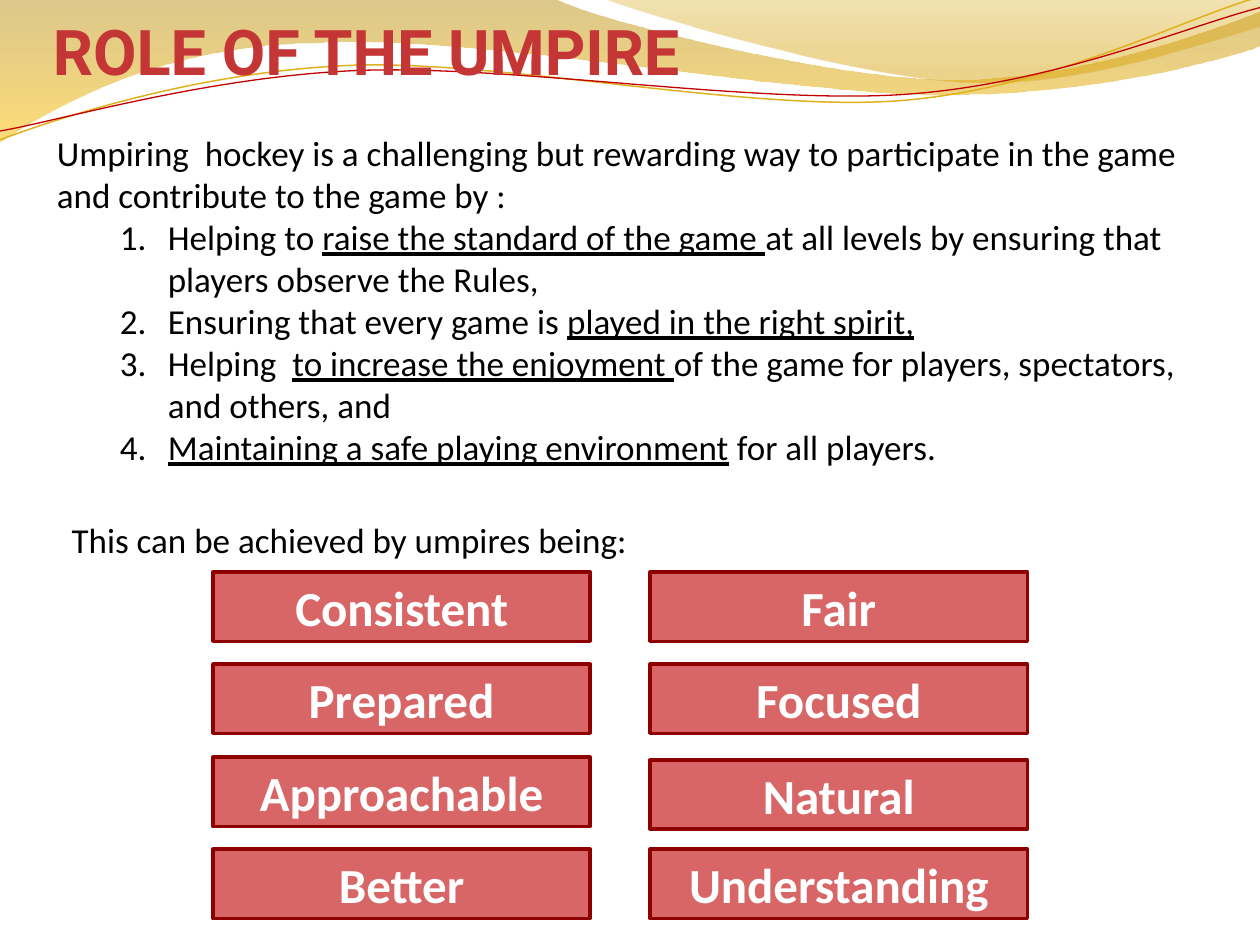
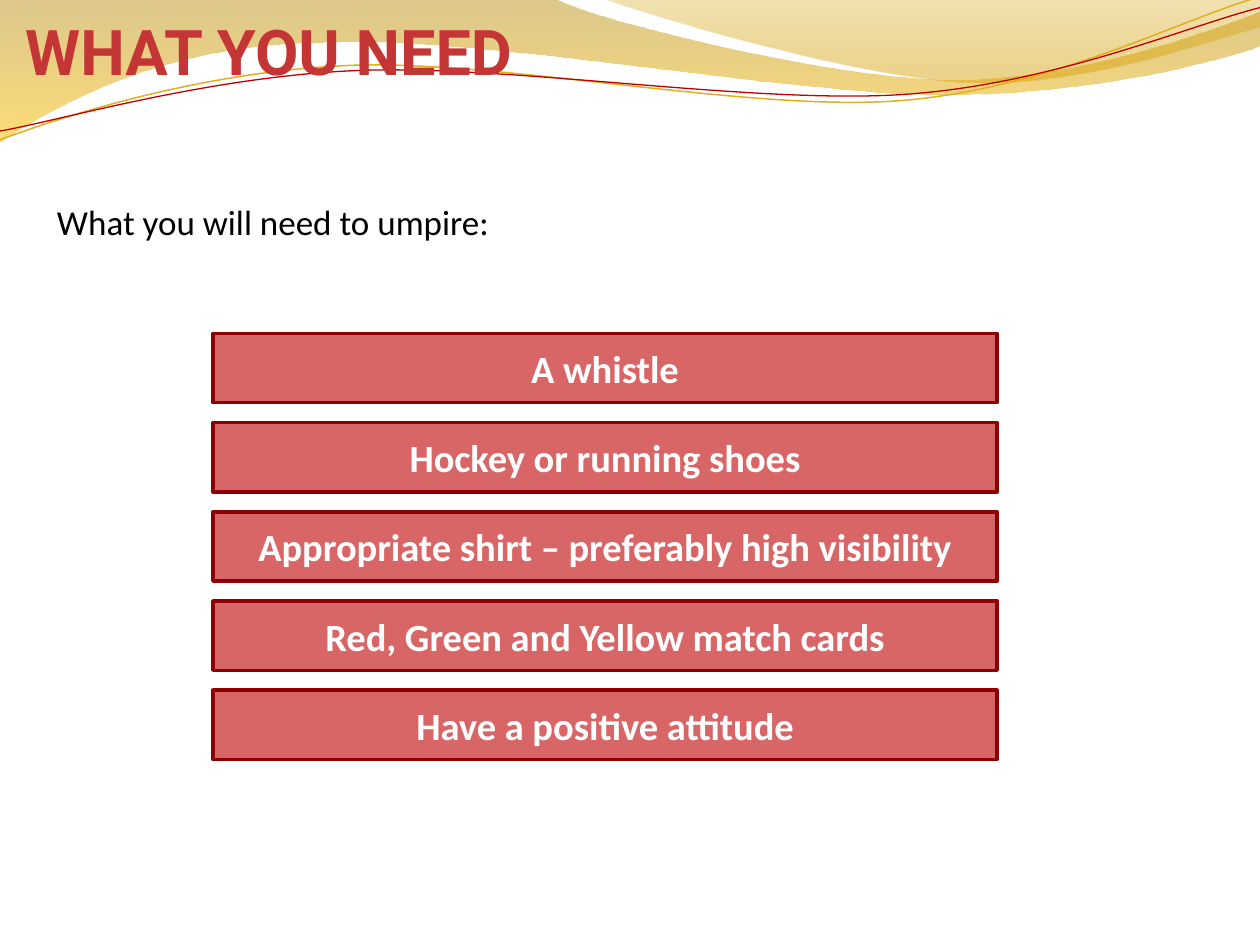
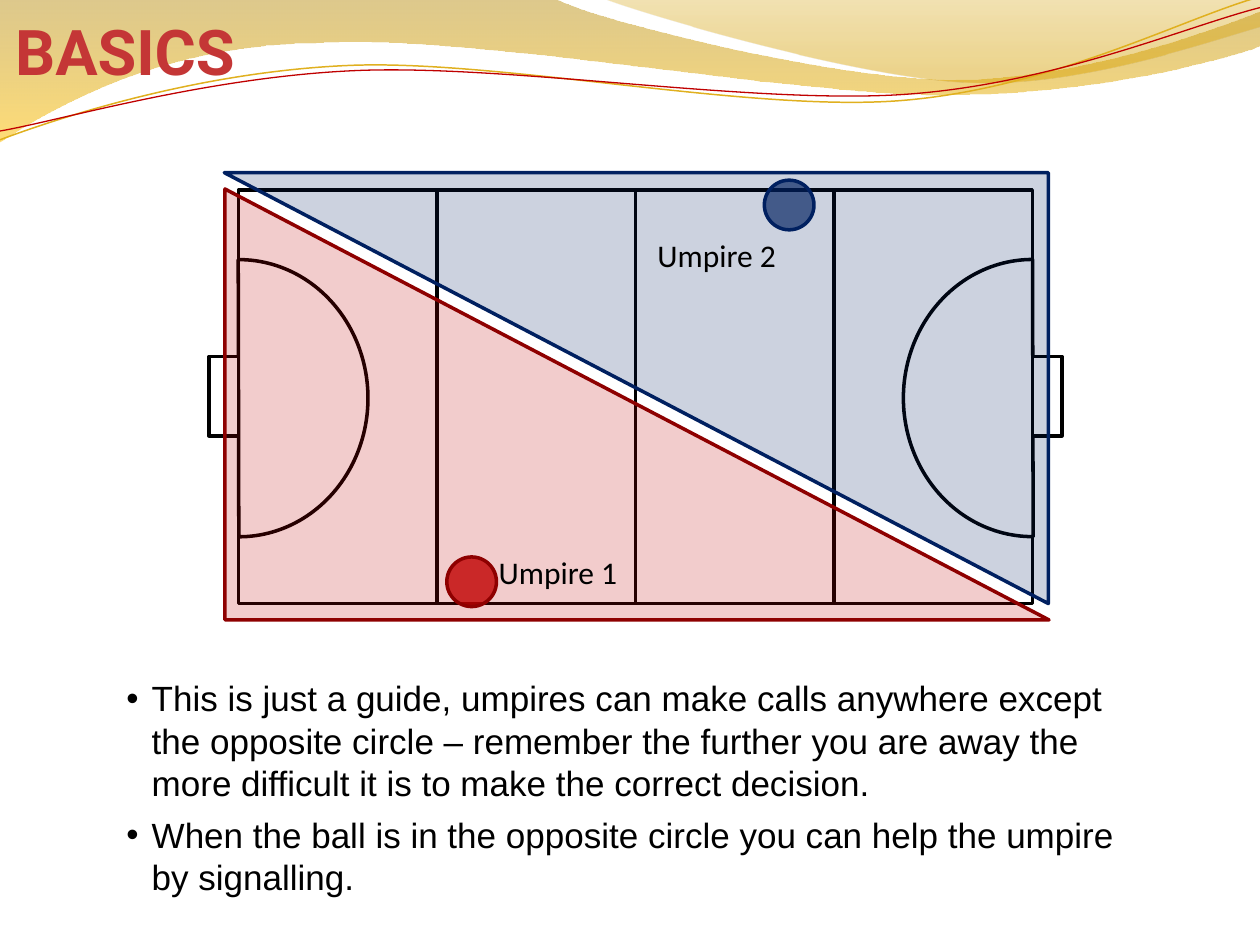
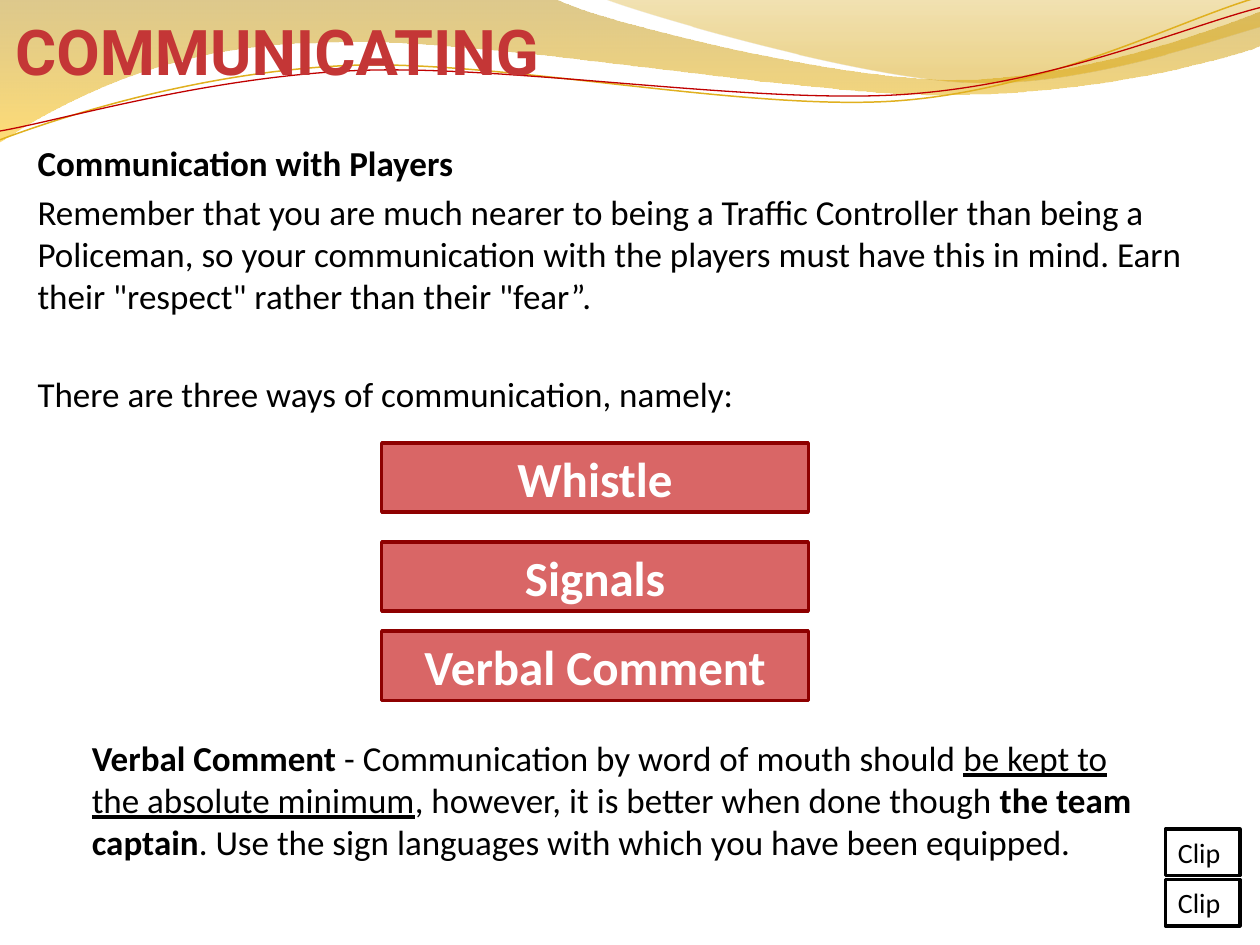
"""Build four slides that introduce hockey umpiring."""

import math
from dataclasses import dataclass
from typing import NamedTuple

import pptx
import pptx.dml.color
import pptx.enum.shapes
import pptx.enum.text
import pptx.oxml
import pptx.oxml.ns
import pptx.util

SHAPES = pptx.enum.shapes.MSO_SHAPE
ANCHOR = pptx.enum.text.MSO_ANCHOR
ALIGN = pptx.enum.text.PP_ALIGN
qn = pptx.oxml.ns.qn

WIDTH, HEIGHT = pptx.util.Inches(10), pptx.util.Inches(7.5)
COLUMNS = 100
CELL = WIDTH // COLUMNS

RED, DARK_RED, NAVY = "C00000", "8E0000", "002060"
BLACK, WHITE = "000000", "FFFFFF"
TITLE_GRADIENT = [(0, "CF6565", 100), (49, "C43636", 100), (50, "9F0000", 100),
                  (92, "8E0000", 100), (100, "8C0000", 100)]
BUTTON_HEIGHT = 5.5
BULLET = ('<a:buFont {} typeface="Arial"/>', '<a:buChar {} char="•"/>')
NUMBER = ('<a:buAutoNum {} type="arabicPeriod"/>',)


class Box(NamedTuple):
    left: float
    top: float
    width: float
    height: float


class Run(NamedTuple):
    text: str
    bold: bool = False
    underline: bool = False


@dataclass
class Paragraph:
    runs: list[Run]
    size: int = 20
    font: str = "Calibri"
    color: str = BLACK
    align: ALIGN = ALIGN.LEFT
    space_before: float = 0
    margin: float = 0
    hanging: float = 0
    marker: tuple[str, ...] = ()


@dataclass
class Panel:
    box: Box
    fill: str = WHITE
    line: str = BLACK
    opacity: int = 100
    preset: SHAPES = SHAPES.RECTANGLE
    rotation: int = 0
    adjustments: tuple[float, ...] = ()


@dataclass
class Wave:
    box: Box
    start: tuple[float, float]
    curves: list[tuple[float, ...]]
    gradient: list[tuple[int, str, int]] | None = None
    line: str = ""
    weight: float = 0
    rotation: float = 0


WAVES = [
    Wave(Box(-0.1, -0.1, 100.2, 11.4), (0, -0.1),
         [(44, -0.1), (47.6, 1.7, 66.4, 6.3, 75.8, 6.3), (85.3, 6.3, 95.8, 2.6, 100, 0.9),
          (100.1, 3.6), (98.3, 4.4, 87, 7.6, 74.6, 7.5), (62.2, 7.5, 38.2, 2.8, 25.7, 3.4),
          (12.9, 3.5, 4.6, 8.3, -0.1, 11.3), (0, -0.1)],
         gradient=[(0, "B58700", 45), (100, "FFC107", 55)]),
    Wave(Box(47.9, -0.1, 52.1, 7), (47.9, -0.1),
         [(50.9, 1.1, 68.2, 6.2, 76.9, 6.5), (85.6, 6.9, 96.1, 3.2, 100, 2.1), (100, 0),
          (47.9, -0.1)],
         gradient=[(0, "D49F02", 30), (80, "D7A100", 45)]),
    Wave(Box(-0.2, 2.2, 100.2, 7.1), (0, 11.1),
         [(4.8, 9.3, 15.8, 5.7, 27.7, 5.2), (39.5, 4.7, 59.3, 8.9, 71.3, 8),
          (83.3, 7.1, 93.8, 1.5, 99.8, -0.2)],
         line="E0B01F", weight=0.85, rotation=-2.7),
    Wave(Box(-0.2, 3, 100.3, 5.8), (0, 10.4),
         [(4.7, 9.6, 16.4, 6.1, 28.3, 5.6), (40.3, 5.1, 59.7, 8.3, 71.7, 7.5),
          (83.6, 6.7, 94.1, 2.1, 100, 0.6)],
         line=RED, weight=0.75, rotation=-2.7),
]


def cells(count: float) -> pptx.util.Emu:
    """Convert grid cells to a length."""
    return pptx.util.Emu(round(count * CELL))


def rgb(color: str) -> pptx.dml.color.RGBColor:
    """Convert a hex string to a colour."""
    return pptx.dml.color.RGBColor.from_string(color)


def place(shape, box: Box) -> None:
    """Move and size a shape on the grid."""
    shape.left, shape.top, shape.width, shape.height = map(cells, box)


def element(template: str):
    """Parse a drawing element whose braces stand for the namespace."""
    return pptx.oxml.parse_xml(template.format(pptx.oxml.ns.nsdecls("a")))


def apply_gradient(properties, stops: list[tuple[int, str, int]]) -> None:
    """Replace the empty fill of a properties element with a vertical gradient."""
    marks = "".join(
        f'<a:gs pos="{position * 1000}"><a:srgbClr val="{color}">'
        f'<a:alpha val="{opacity * 1000}"/></a:srgbClr></a:gs>'
        for position, color, opacity in stops)
    gradient = element(
        '<a:gradFill {} rotWithShape="1"><a:gsLst>' + marks
        + '</a:gsLst><a:lin ang="5400000" scaled="0"/></a:gradFill>')
    properties.replace(properties.find(qn("a:noFill")), gradient)


def local_point(wave: Wave, x: float, y: float) -> str:
    """Write a slide point in the frame of a wave before its rotation."""
    left, top, width, height = wave.box
    angle = math.radians(-wave.rotation)
    across, down = x - left - width / 2, y - top - height / 2
    turned_x = across * math.cos(angle) - down * math.sin(angle) + width / 2
    turned_y = across * math.sin(angle) + down * math.cos(angle) + height / 2
    return f'<a:pt x="{cells(turned_x)}" y="{cells(turned_y)}"/>'


def curve_outline(wave: Wave):
    """Build the outline of a wave from lines and cubic curves."""
    steps = [f"<a:moveTo>{local_point(wave, *wave.start)}</a:moveTo>"]
    for curve in wave.curves:
        tag = "lnTo" if len(curve) == 2 else "cubicBezTo"
        points = "".join(local_point(wave, *pair) for pair in zip(curve[::2], curve[1::2]))
        steps.append(f"<a:{tag}>{points}</a:{tag}>")
    if wave.gradient:
        steps.append("<a:close/>")
    size = f'w="{cells(wave.box.width)}" h="{cells(wave.box.height)}"'
    return element("<a:path {} " + size + ">" + "".join(steps) + "</a:path>")


def add_waves(slide, master) -> None:
    """Draw the header waves and hand them to the slide master."""
    for index, wave in enumerate(WAVES):
        builder = slide.shapes.build_freeform(*map(cells, wave.start), scale=1.0)
        builder.add_line_segments([tuple(map(cells, curve[-2:])) for curve in wave.curves],
                                  close=False)
        shape = builder.convert_to_shape()
        straight = next(shape._element.iter(qn("a:path")))
        straight.getparent().replace(straight, curve_outline(wave))
        place(shape, wave.box)
        shape.rotation = wave.rotation
        shape.shadow.inherit = False
        shape.fill.background()
        if wave.gradient:
            shape.line.fill.background()
            apply_gradient(shape._element.spPr, wave.gradient)
        else:
            shape.line.color.rgb = rgb(wave.line)
            shape.line.width = pptx.util.Pt(wave.weight)
        shape._element.nvSpPr.cNvPr.id = 100 + index
        master.shapes._spTree.insert(2 + index, shape._element)


def write(frame, paragraphs: list[Paragraph]) -> None:
    """Fill a text frame with formatted paragraphs."""
    for index, content in enumerate(paragraphs):
        paragraph = frame.paragraphs[0] if index == 0 else frame.add_paragraph()
        paragraph.alignment = content.align
        properties = paragraph._p.get_or_add_pPr()
        properties.set("marL", str(cells(content.margin)))
        properties.set("indent", str(cells(-content.hanging)))
        if content.marker:
            paragraph.level = 1
            for template in content.marker:
                properties.append(element(template))
        paragraph.space_before = pptx.util.Pt(content.space_before)
        paragraph.font.size = pptx.util.Pt(content.size)
        paragraph.font.name = content.font
        paragraph.font.color.rgb = rgb(content.color)
        for part in content.runs:
            run = paragraph.add_run()
            run.text = part.text
            if part.bold:
                run.font.bold = True
            if part.underline:
                run.font.underline = True


def add_text(slide, box: Box, paragraphs: list[Paragraph]) -> None:
    """Add a wrapping text box."""
    shape = slide.shapes.add_textbox(*map(cells, box))
    shape.text_frame.word_wrap = True
    write(shape.text_frame, paragraphs)


def add_panel(slide, panel: Panel):
    """Add an outlined preset shape."""
    shape = slide.shapes.add_shape(panel.preset, *map(cells, panel.box))
    shape.shadow.inherit = False
    shape.rotation = panel.rotation
    for index, value in enumerate(panel.adjustments):
        shape.adjustments[index] = value
    shape.fill.solid()
    shape.fill.fore_color.rgb = rgb(panel.fill)
    if panel.opacity < 100:
        color = shape._element.spPr.find(qn("a:solidFill")).find(qn("a:srgbClr"))
        color.append(element('<a:alpha {} val="' + str(panel.opacity * 1000) + '"/>'))
    shape.line.color.rgb = rgb(panel.line)
    shape.line.width = pptx.util.Pt(2)
    return shape


def add_buttons(slide, labels: list[str], left: float, width: float,
                tops: list[float], size: int = 28) -> None:
    """Add a column of red buttons."""
    for label, top in zip(labels, tops):
        box = Box(left, top, width, BUTTON_HEIGHT)
        shape = add_panel(slide, Panel(box, RED, DARK_RED, 60))
        shape.text_frame.word_wrap = True
        shape.text_frame.vertical_anchor = ANCHOR.MIDDLE
        write(shape.text_frame,
              [Paragraph([Run(label, bold=True)], size, color=WHITE, align=ALIGN.CENTER)])


def add_titled_slide(presentation, title: str, left: float = 1.2, width: float = 58.3,
                     margin: float = 0, align: ALIGN = ALIGN.LEFT):
    """Add a slide with the shared title style."""
    slide = presentation.slides.add_slide(presentation.slide_layouts[5])
    shape = slide.shapes.title
    place(shape, Box(left, 0, width, 7))
    frame = shape.text_frame
    frame.auto_size = pptx.enum.text.MSO_AUTO_SIZE.NONE
    frame.word_wrap = True
    frame.vertical_anchor = ANCHOR.BOTTOM
    frame.margin_left = frame.margin_right = frame.margin_bottom = 0
    frame.margin_top = cells(0.5)
    write(frame, [Paragraph([Run(title, bold=True)], 36, "Roboto", RED, align, margin=margin)])
    run = frame.paragraphs[0].runs[0]
    run.font.fill.background()
    apply_gradient(run._r.get_or_add_rPr(), TITLE_GRADIENT)
    return slide


def build_role(presentation) -> None:
    """Build the slide on the umpire's role, along with the shared header."""
    slide = add_titled_slide(presentation, "ROLE OF THE UMPIRE ", 0, 59.4, align=ALIGN.CENTER)
    add_waves(slide, presentation.slide_master)
    add_text(slide, Box(4.7, 40.65, 95.3, 4.4),
             [Paragraph([Run("This can be achieved by umpires being:")])])
    duties = [
        [Run("Helping to "), Run("raise the standard of the game ", underline=True),
         Run("at all levels by ensuring that players observe the Rules,")],
        [Run("Ensuring that every game is "), Run("played in the right spirit,", underline=True)],
        [Run("Helping  "), Run("to increase the enjoyment ", underline=True),
         Run("of the game for players, spectators, and others, and")],
        [Run("Maintaining a safe playing environment", underline=True),
         Run(" for all players.")],
    ]
    intro = Paragraph([Run("Umpiring  hockey is a challenging but rewarding way to participate "
                           "in the game and contribute to the game by :")])
    add_text(slide, Box(3.54, 9.94, 91.3, 27.9),
             [intro] + [Paragraph(duty, margin=8.8, hanging=3.8, marker=NUMBER)
                        for duty in duties])
    add_buttons(slide, ["Consistent", "Prepared", "Approachable", "Better"], 16.9, 29.94,
                [45.4, 52.7, 60.1, 67.4])
    add_buttons(slide, ["Fair", "Focused", "Natural", "Understanding"], 51.6, 29.94,
                [45.4, 52.7, 60.3, 67.4])


def build_needs(presentation) -> None:
    """Build the slide on equipment."""
    slide = add_titled_slide(presentation, "WHAT YOU NEED", 0, 59.4, margin=2)
    add_text(slide, Box(3.54, 15.46, 91.3, 4.4),
             [Paragraph([Run("What you will need to umpire:")])])
    needs = ["A whistle", "Hockey or running shoes",
             "Appropriate shirt – preferably high visibility",
             "Red, Green and Yellow match cards", "Have a positive attitude"]
    add_buttons(slide, needs, 16.9, 62.24, [26.46 + 7.08 * row for row in range(5)], 22)


def build_basics(presentation) -> None:
    """Build the slide with the pitch and the umpires' areas."""
    slide = add_titled_slide(presentation, "BASICS")
    arc = (53.85, 162)
    quarters = [Panel(Box(18.93 + 15.75 * column, 15.1, 15.75, 32.8)) for column in range(4)]
    circles = [Panel(Box(left, 20.6, 20.5, 22), preset=SHAPES.CHORD, rotation=rotation,
                     adjustments=arc) for left, rotation in ((71.7, 0), (8.7, 180))]
    goals = [Panel(Box(left, 28.3, 2.36, 6.3)) for left in (16.58, 81.93)]
    areas = [
        Panel(Box(17.86, 15, 65.4, 34.2), RED, DARK_RED, 20, SHAPES.RIGHT_TRIANGLE),
        Panel(Box(17.8, 13.7, 65.4, 34.2), NAVY, NAVY, 20, SHAPES.RIGHT_TRIANGLE, 180),
    ]
    umpires = [
        Panel(Box(35.46, 44.2, 3.94, 3.94), RED, DARK_RED, 80, SHAPES.OVAL),
        Panel(Box(60.66, 14.3, 3.94, 3.94), NAVY, NAVY, 67, SHAPES.OVAL),
    ]
    for panel in quarters + circles + goals + areas + umpires:
        add_panel(slide, panel)
    for label, left, top in (("Umpire 1", 38.6, 43.4), ("Umpire 2", 51.2, 18.24)):
        add_text(slide, Box(left, top, 12.6, 4), [Paragraph([Run(label)], 18)])
    advice = [
        "This is just a guide, umpires can make calls anywhere except the opposite circle – "
        "remember the further you are away the more difficult it is to make the correct decision.",
        "When the ball is in the opposite circle you can help the umpire by signalling.",
    ]
    add_text(slide, Box(9.06, 53.24, 82.7, 18.7),
             [Paragraph([Run(line)], font="Arial", space_before=6, margin=2, hanging=2,
                        marker=BULLET) for line in advice])


def build_communicating(presentation) -> None:
    """Build the slide on communication."""
    slide = add_titled_slide(presentation, "COMMUNICATING")
    add_text(slide, Box(2, 10.7, 93.7, 22), [
        Paragraph([Run("Communication with Players", bold=True)], space_before=4,
                  margin=3, hanging=3),
        Paragraph([Run("Remember that you are much nearer to being a Traffic Controller than "
                       "being a Policeman, so your communication with the players must have "
                       "this in mind. Earn their \"respect\" rather than their \"fear”.")],
                  space_before=4),
        Paragraph([Run("There are three ways of communication, namely:")], space_before=32,
                  margin=3, hanging=3),
    ])
    for top in (69.8, 65.8):
        clip = add_panel(slide, Panel(Box(92.5, top, 5.9, 3.7)))
        clip.text_frame.word_wrap = False
        clip.text_frame.vertical_anchor = ANCHOR.TOP
        write(clip.text_frame, [Paragraph([Run("Clip")], 16)])
    add_buttons(slide, ["Whistle", "Signals", "Verbal Comment"], 30.3, 33.86,
                [35.14, 43, 50.1])
    add_text(slide, Box(6.3, 57.96, 86.2, 12.6), [Paragraph([
        Run("Verbal Comment ", bold=True),
        Run("- Communication by word of mouth should "),
        Run("be kept to the absolute minimum", underline=True),
        Run(", however, it is better when done though "),
        Run("the team captain", bold=True),
        Run(". Use the sign languages with which you have been equipped."),
    ], space_before=4)])


def main() -> None:
    """Build and save the presentation."""
    presentation = pptx.Presentation()
    presentation.slide_width, presentation.slide_height = WIDTH, HEIGHT
    for build in (build_role, build_needs, build_basics, build_communicating):
        build(presentation)
    presentation.save("out.pptx")


if __name__ == "__main__":
    main()
